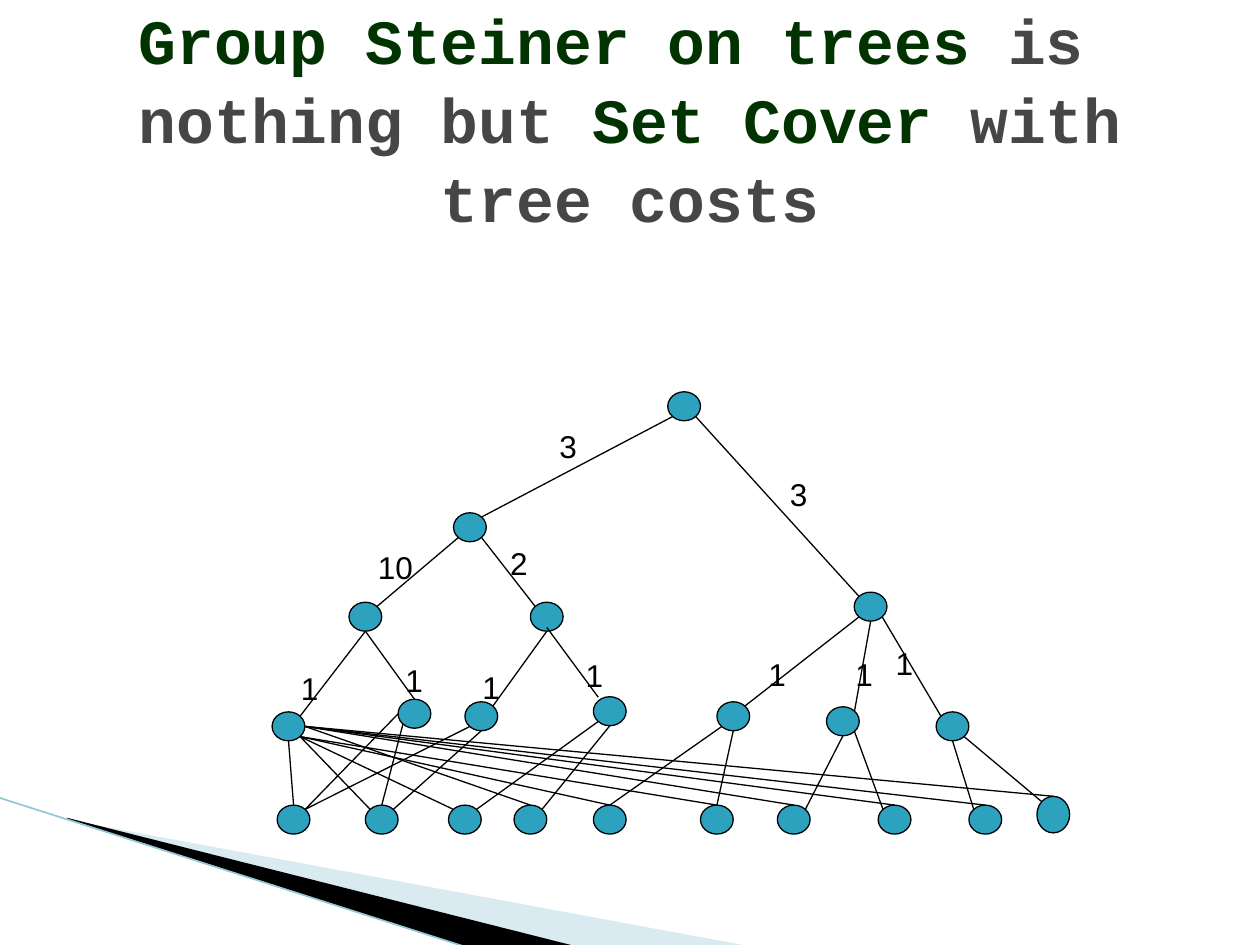
from dataclasses import dataclass, field
from math import sqrt

from lxml.etree import SubElement
from pptx import Presentation
from pptx.dml.color import RGBColor as Rgb
from pptx.enum.shapes import MSO_CONNECTOR as Link, MSO_SHAPE as Form
from pptx.enum.text import MSO_ANCHOR as Anchor, MSO_AUTO_SIZE as Fit, PP_ALIGN as Align
from pptx.oxml.ns import qn
from pptx.util import Inches, Pt


@dataclass(frozen=True)
class Theme:
    green: Rgb = Rgb(0x00, 0x33, 0x00)
    gray: Rgb = Rgb(0x46, 0x46, 0x46)
    black: Rgb = Rgb(0x00, 0x00, 0x00)
    node: Rgb = Rgb(0x2D, 0xA2, 0xBF)
    pale: Rgb = Rgb(0xA0, 0xCB, 0xDC)
    rim: Rgb = Rgb(0x97, 0xC5, 0xD8)
    thin: float = 0.75
    edge: float = 0.95
    head: dict = field(default_factory=lambda: dict(name="Courier New", size=Pt(36), bold=True))
    label: dict = field(default_factory=lambda: dict(name="Arial", size=Pt(18), bold=False))


THEME = Theme()
WIDE, TALL = 0.26, 0.23
DIAG = sqrt(0.5)
SITES = {
    "n": (0, -1), "s": (0, 1), "w": (-1, 0), "e": (1, 0),
    "nw": (-DIAG, -DIAG), "ne": (DIAG, -DIAG),
    "sw": (-DIAG, DIAG), "se": (DIAG, DIAG),
}

NODES = {
    "root": (3.3, 0.11), "left": (1.6, 1.07), "right": (4.78, 1.7),
    "a": (0.77, 1.78), "b": (2.21, 1.78),
}
SETS = [(0.16, 2.65), (1.16, 2.55), (1.69, 2.57), (2.71, 2.53),
        (3.69, 2.57), (4.56, 2.61), (5.43, 2.65)]
ITEMS = [0.2, 0.9, 1.56, 2.08, 2.71, 3.56, 4.17, 4.97, 5.69]
NODES.update({f"s{i}": spot for i, spot in enumerate(SETS)})
NODES.update({f"i{i}": (x, 3.39) for i, x in enumerate(ITEMS)})
NODES["i9"] = (6.23, 3.32, 0.29)

EDGES = {
    "root": "sw left ne, se right nw",
    "left": "sw a ne, se b nw",
    "right": "sw s4 ne, s s5 ne, se s6 nw",
    "a": "s s0 ne, s s1 n",
    "b": "s s2 ne, s s3 nw",
    "s0": "s i0 n, se i1 nw, se i2 nw, e i3 n, se i4 n, "
          "se i5 n, e i6 n, e i7 n, e i8 n, e i9 n",
    "s1": "w i0 ne, sw i1 n",
    "s2": "sw i0 ne, s i1 ne",
    "s3": "sw i2 ne, s i3 ne",
    "s4": "sw i4 n, s i5 n",
    "s5": "s i6 ne, se i7 nw",
    "s6": "s i8 nw, se i9 nw",
}
LIFT = {("b", "s3"): 0.03}

COSTS = [
    ("1", 0.29, 2.26, 0.3), ("1", 1.12, 2.2, 0.44), ("1", 1.73, 2.25, 0.52),
    ("1", 2.55, 2.16, 0.58), ("1", 4, 2.15, 0.39), ("1", 5.01, 2.06, 0.55),
    ("10", 0.9, 1.3, 0.79), ("2", 1.95, 1.27, 0.52), ("3", 4.17, 0.72, 0.61),
    ("1", 4.69, 2.15, 0.35), ("3", 2.34, 0.34, 0.41),
]


def apply(item, values):
    for key, value in values.items():
        setattr(item, key, value)


def write(para, text, style, color):
    run = para.add_run()
    run.text = text
    apply(run.font, style)
    run.font.color.rgb = color


def draw_line(slide, start, end, color, width):
    line = slide.shapes.add_connector(Link.STRAIGHT, *map(Inches, start + end))
    line.line.color.rgb = color
    line.line.width = Pt(width)
    SubElement(line._element.spPr, qn("a:effectLst"))


def add_wedge(slide, box, points, color, alpha=None):
    spots = [(Inches(box[0] + x), Inches(box[1] + y)) for x, y in points]
    pen = slide.shapes.build_freeform(*spots[0], scale=1.0)
    pen.add_line_segments(spots[1:], close=True)
    wedge = pen.convert_to_shape()
    wedge.shadow.inherit = False
    wedge.fill.solid()
    wedge.fill.fore_color.rgb = color
    wedge.line.fill.background()
    if alpha:
        tint = wedge._element.spPr.find(qn("a:solidFill"))[0]
        SubElement(tint, qn("a:alpha")).set("val", str(alpha * 1000))


def add_decor(slide, box):
    left, top = box[:2]
    add_wedge(slide, box, [(0.55, 0.21), (5.95, 1.21), (4.56, 1.21), (0.55, 0.2)],
              THEME.pale, 40)
    add_wedge(slide, box, [(0.53, 0.19), (4.57, 1.21), (3.72, 1.22), (0.54, 0.2)],
              THEME.black)
    draw_line(slide, (left - 0.01, top + 0.03), (left + 3.71, top + 1.22),
              THEME.rim, THEME.edge)


def add_title(slide, box):
    title = slide.shapes.title
    apply(title, dict(zip(("left", "top", "width", "height"), map(Inches, box))))
    frame = title.text_frame
    apply(frame, dict(word_wrap=True, auto_size=Fit.NONE, vertical_anchor=Anchor.MIDDLE))
    para = frame.paragraphs[0]
    apply(para, dict(alignment=Align.CENTER, line_spacing=1.05))
    for text, color in [
        ("Group Steiner on trees", THEME.green),
        (" is  nothing but ", THEME.gray),
        ("Set Cover", THEME.green),
        (" with tree costs", THEME.gray),
    ]:
        write(para, text, THEME.head, color)


def add_node(slide, box, x, y, tall=TALL):
    node = slide.shapes.add_shape(
        Form.OVAL, *map(Inches, (box[0] + x, box[1] + y, WIDE, tall)))
    node.shadow.inherit = False
    node.fill.solid()
    node.fill.fore_color.rgb = THEME.node
    node.line.color.rgb = THEME.black
    node.line.width = Pt(THEME.thin)


def find_site(box, name, site, lift):
    x, y, tall = (*NODES[name], TALL)[:3]
    dx, dy = SITES[site]
    return (box[0] + x + WIDE / 2 * (1 + dx),
            box[1] + y + tall / 2 * (1 + dy) - lift)


def add_cost(slide, box, text, x, y, width):
    label = slide.shapes.add_textbox(
        *map(Inches, (box[0] + x, box[1] + y, width, 0.4)))
    frame = label.text_frame
    apply(frame, dict(word_wrap=True, auto_size=Fit.SHAPE_TO_FIT_TEXT))
    write(frame.paragraphs[0], text, THEME.label, THEME.black)


def add_tree(slide, box):
    for spot in NODES.values():
        add_node(slide, box, *spot)
    for top, links in EDGES.items():
        for link in links.split(", "):
            out, low, into = link.split()
            lift = LIFT.get((top, low), 0)
            draw_line(slide, find_site(box, top, out, lift),
                      find_site(box, low, into, lift), THEME.black, THEME.thin)
    for cost in COSTS:
        add_cost(slide, box, *cost)


def main():
    deck = Presentation()
    deck.slide_width, deck.slide_height = Inches(10), Inches(7.5)
    slide = deck.slides.add_slide(deck.slide_layouts[5])
    add_decor(slide, (0, 6.3, 6, 1.2))
    add_title(slide, (0.5, 0.3, 9, 1.25))
    add_tree(slide, (2, 3, 6.5, 3.65))
    deck.save("out.pptx")


if __name__ == "__main__":
    main()
